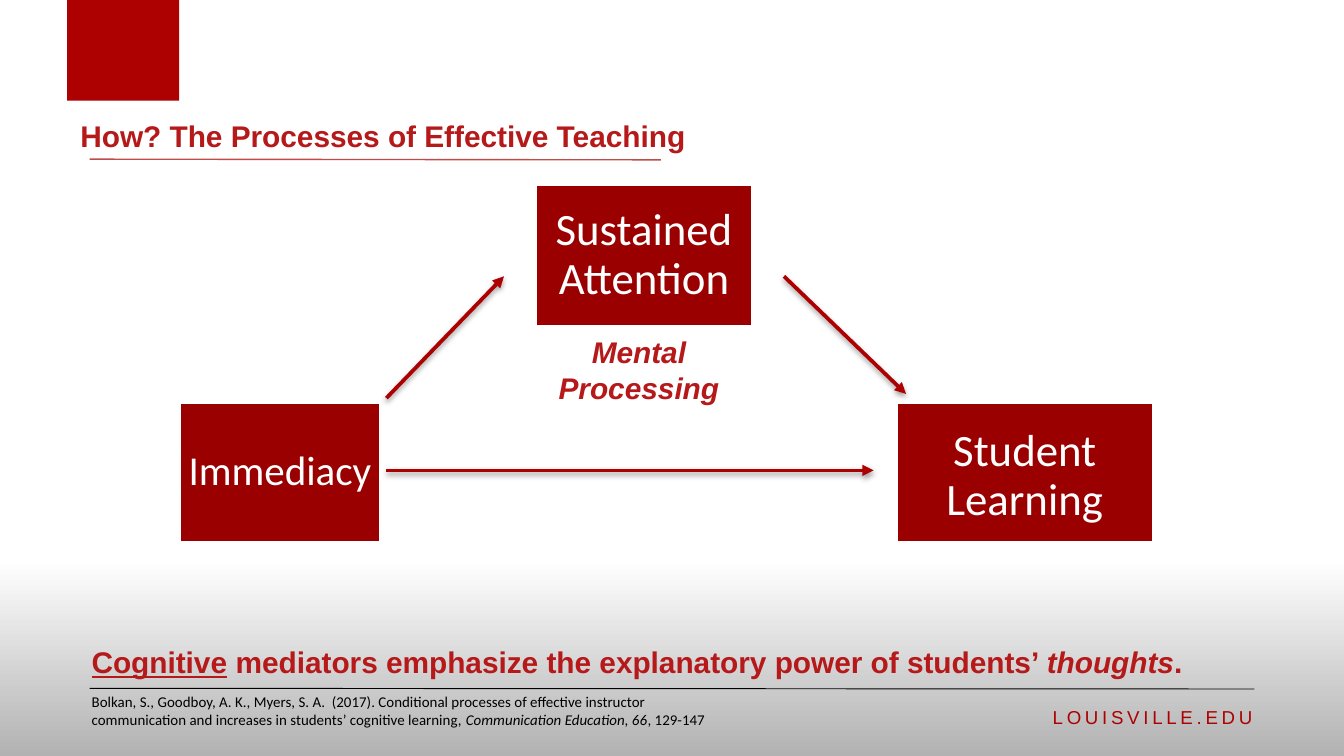
from lxml import etree
from pptx import Presentation
from pptx.dml.color import RGBColor
from pptx.enum.shapes import MSO_CONNECTOR, MSO_SHAPE
from pptx.enum.text import MSO_ANCHOR as Anchor, PP_ALIGN as Align
from pptx.oxml import parse_xml
from pptx.oxml.ns import nsdecls, qn
from pptx.util import Inches, Pt

RED = RGBColor(0xAD, 0x00, 0x00)
DARK_RED = RGBColor(0x9B, 0x00, 0x00)
TEXT_RED = RGBColor(0xB5, 0x19, 0x1A)
RULE_RED = RGBColor(0xBF, 0x4C, 0x48)
GRAY = RGBColor(0xB2, 0xB2, 0xB2)
BLACK = RGBColor(0x00, 0x00, 0x00)
WHITE = RGBColor(0xFF, 0xFF, 0xFF)

presentation = Presentation()
presentation.slide_width = Inches(10)
presentation.slide_height = presentation.slide_width * 9 // 16
COLUMN = presentation.slide_width / 120
ROW = presentation.slide_height / 90
slide = presentation.slides.add_slide(presentation.slide_layouts[6])


def grid(left, top, width, height):
    return int(left * COLUMN), int(top * ROW), int(width * COLUMN), int(height * ROW)


def add_text(place, runs, size, color, font="Arial", bold=False, align=Align.LEFT, anchor=Anchor.TOP, wrap=True):
    box = slide.shapes.add_textbox(*grid(*place))
    frame = box.text_frame
    frame.word_wrap = wrap
    frame.vertical_anchor = anchor
    paragraph = frame.paragraphs[0]
    paragraph.alignment = align
    for text, style in runs:
        if text == "\n":
            paragraph = frame.add_paragraph()
            paragraph.alignment = align
            continue
        run = paragraph.add_run()
        run.text = text
        run.font.name = font
        run.font.size = Pt(size)
        run.font.bold = bold
        run.font.italic = style == "italic"
        run.font.underline = style == "underline"
        run.font.color.rgb = color
    return box


background = slide.background.fill
background.gradient()
background.gradient_angle = 270
for stop, (position, color) in zip(background.gradient_stops, [(0.74, WHITE), (1, GRAY)]):
    stop.position = position
    stop.color.rgb = color

corner = slide.shapes.add_shape(MSO_SHAPE.RECTANGLE, *grid(6, 0, 10, 12))
corner.shadow.inherit = False
corner.fill.solid()
corner.fill.fore_color.rgb = RED
corner.line.fill.background()

boxes = [
    ("Immediacy", (16, 47.84, 18, 16.8), 22, 0.06, 0),
    ("Student Learning", (80, 47.84, 23, 16.8), 24, 0.09, 0.03),
    ("Sustained Attention", (47.8, 21.92, 19.4, 17), 24, 0.09, 0),
]
for label, place, size, inset, drop in boxes:
    box = slide.shapes.add_shape(MSO_SHAPE.RECTANGLE, *grid(*place))
    box.shadow.inherit = False
    box.fill.solid()
    box.fill.fore_color.rgb = DARK_RED
    box.line.color.rgb = WHITE
    box.line.width = Pt(2)
    frame = box.text_frame
    frame.word_wrap = True
    frame.vertical_anchor = Anchor.MIDDLE
    frame.margin_left = frame.margin_right = Inches(inset)
    frame.margin_top = Inches(inset + drop)
    frame.margin_bottom = Inches(inset - drop)
    frame.text = label
    paragraph = frame.paragraphs[0]
    paragraph.alignment = Align.CENTER
    paragraph.line_spacing = 0.9
    paragraph.font.name = "Calibri"
    paragraph.font.size = Pt(size)
    paragraph.font.color.rgb = WHITE

lines = [
    ((112, 82.03), (8, 81.95), BLACK, 0.5, False),
    ((59, 19.03), (8, 18.95), RULE_RED, 0.75, False),
    ((34.5, 56), (78, 56), RED, 2, True),
    ((34.5, 47.4), (45, 32.9), RED, 2, True),
    ((70, 32.9), (80.9, 46.9), RED, 2, True),
]
for start, end, color, width, is_arrow in lines:
    line = slide.shapes.add_connector(MSO_CONNECTOR.STRAIGHT, *grid(*start, *end))
    line.line.color.rgb = color
    line.line.width = Pt(width)
    properties = line._element.spPr
    effects = etree.SubElement(properties, qn("a:effectLst"))
    if is_arrow:
        etree.SubElement(properties.find(qn("a:ln")), qn("a:tailEnd"), type="triangle")
        effects.append(parse_xml(
            f'<a:outerShdw {nsdecls("a")} blurRad="{Pt(3.1)}" dist="{Pt(1.6)}" dir="5400000" rotWithShape="0">'
            '<a:srgbClr val="000000"><a:alpha val="38000"/></a:srgbClr></a:outerShdw>'))

add_text((6, 13.05, 57, 6), [("How? The Processes of Effective Teaching", "")],
         16, TEXT_RED, bold=True, anchor=Anchor.BOTTOM)
add_text((7, 75.7, 101, 6), [
    ("Cognitive", "underline"),
    (" mediators emphasize the explanatory power of students’ ", ""),
    ("thoughts", "italic"),
    (".", ""),
], 16, TEXT_RED, bold=True, anchor=Anchor.BOTTOM)
add_text((48.6, 38.9, 16.9, 10.2), [("Mental", "italic"), ("\n", ""), ("Processing", "italic")],
         16, TEXT_RED, bold=True, align=Align.CENTER, wrap=False)
add_text((7, 81.65, 60.4, 5.9), [
    ("Bolkan, S., Goodboy, A. K., Myers, S. A.  (2017). Conditional processes of effective instructor "
     "communication and increases in students’ cognitive learning, ", ""),
    ("Communication Education, 66", "italic"),
    (", 129-147", ""),
], 8, BLACK, font="Calibri")
address = add_text((87, 83.2, 26, 4.8), [("LOUISVILLE.EDU", "")], 10, RED, align=Align.RIGHT)
address.text_frame.paragraphs[0].runs[0].font._element.set("spc", "200")

presentation.save("out.pptx")
